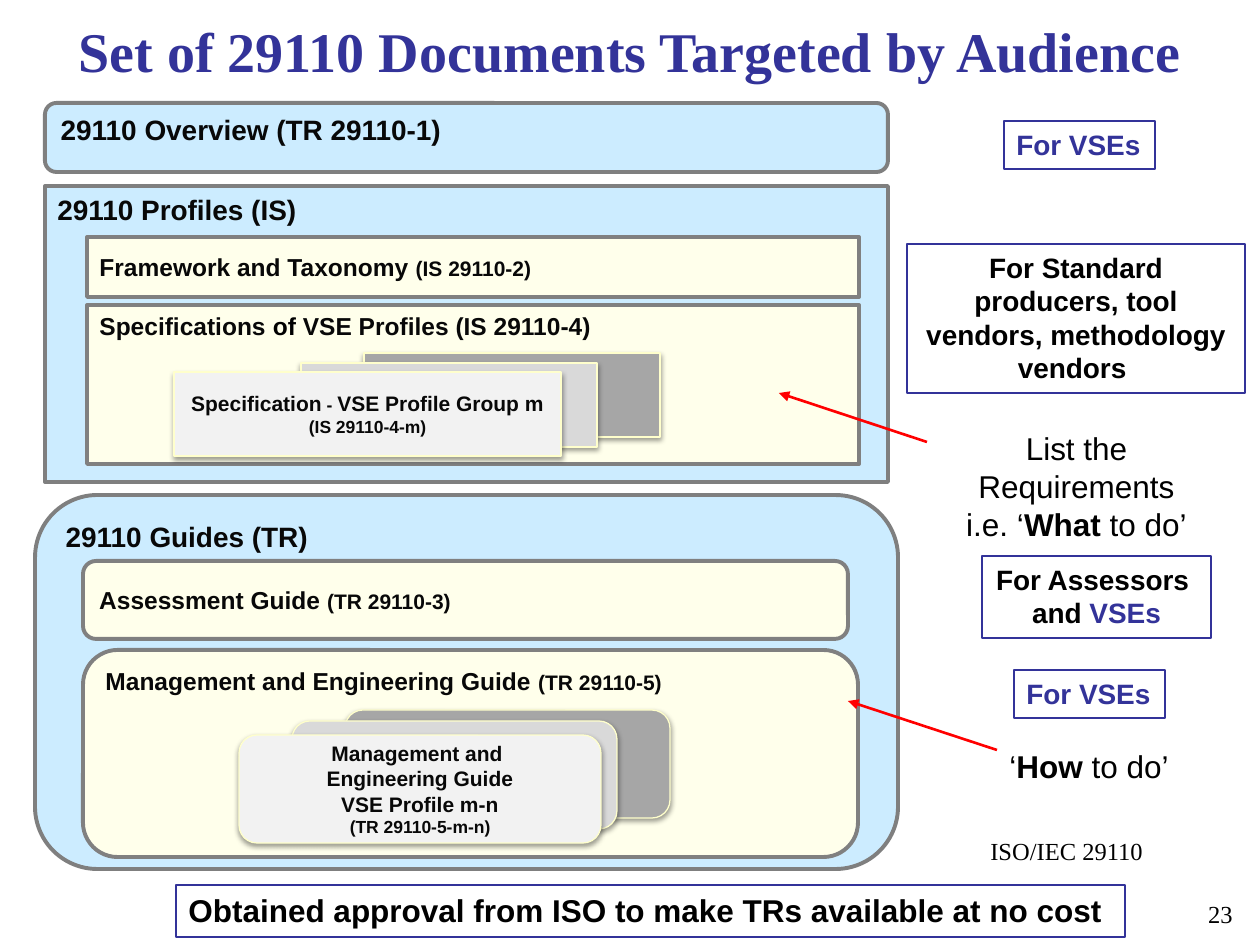
from lxml import etree
from pptx import Presentation
from pptx import util as u
from pptx.dml.color import RGBColor
from pptx.enum import shapes, text
from pptx.oxml.ns import qn

PX = 914400 / 126
COLORS = {
    "navy": "333399", "black": "000000", "ink": "080808", "red": "FF0000",
    "blue": "CCECFF", "cream": "FFFFEB", "edge": "7F7F7F", "inner_edge": "808080",
    "card_edge": "FFFFCC", "back": "A6A6A6", "middle": "D9D9D9", "front": "F2F2F2",
}
RECT = shapes.MSO_SHAPE.RECTANGLE
ROUND = shapes.MSO_SHAPE.ROUNDED_RECTANGLE
LEFT, CENTER, RIGHT = text.PP_ALIGN.LEFT, text.PP_ALIGN.CENTER, text.PP_ALIGN.RIGHT
TOP, MIDDLE = text.MSO_ANCHOR.TOP, text.MSO_ANCHOR.MIDDLE
SERIF = "Times New Roman"


def px(*lengths):
    """Turn pixel lengths into EMU."""
    return [u.Emu(round(n * PX)) for n in lengths]


def rgb(name):
    """Look up a named colour."""
    return RGBColor.from_string(COLORS[name])


def style(font, size=None, color=None, bold=None, name=None):
    """Set the given font properties."""
    if size:
        font.size = u.Pt(size)
    if color:
        font.color.rgb = rgb(color)
    if bold is not None:
        font.bold = bold
    if name:
        font.name = name


def write(tf, paras, size, color="ink", bold=True, name="Arial", align=LEFT, anchor=TOP):
    """Fill a text frame with paragraphs of (text, overrides) runs."""
    tf.vertical_anchor = anchor
    for i, runs in enumerate(paras):
        p = tf.paragraphs[0] if i == 0 else tf.add_paragraph()
        p.alignment = align
        style(p.font, size, color, bold, name)
        for words, changes in runs:
            r = p.add_run()
            r.text = words
            style(p.font if len(runs) == 1 else r.font, **changes)


def add_title(s, words):
    """Place and format the slide title."""
    sp = s.shapes.title
    sp.left, sp.top, sp.width, sp.height = px(0, -24, 1260, 157)
    write(sp.text_frame, [[(words, {})]], 32, "navy", name=SERIF, align=CENTER, anchor=MIDDLE)
    sp.text_frame.paragraphs[0].line_spacing = 0.9


def add_label(s, box, paras, size, wrap=False, framed=False, **look):
    """Add a text box, with a thin navy frame if asked."""
    sp = s.shapes.add_textbox(*px(*box))
    tf = sp.text_frame
    tf.word_wrap = wrap
    tf.auto_size = text.MSO_AUTO_SIZE.SHAPE_TO_FIT_TEXT
    write(tf, paras, size, **look)
    if framed:
        sp.line.color.rgb = rgb("navy")
        sp.line.width = u.Pt(0.75)


def add_box(s, kind, box, fill, edge, weight=2.25):
    """Add a filled, outlined shape without a shadow."""
    sp = s.shapes.add_shape(kind, *px(*box))
    sp.shadow.inherit = False
    sp.fill.solid()
    sp.fill.fore_color.rgb = rgb(fill)
    sp.line.color.rgb = rgb(edge)
    sp.line.width = u.Pt(weight)
    return sp


def add_section(s, kind, box, heading):
    """Add a blue section with its heading."""
    sp = add_box(s, kind, box, "blue", "edge")
    write(sp.text_frame, [[(heading, {})]], 16)


def add_panel(s, kind, box, runs, anchor=TOP):
    """Add a cream panel with its heading."""
    sp = add_box(s, kind, box, "cream", "inner_edge")
    write(sp.text_frame, [runs], 14, anchor=anchor)


def add_shadow(sp):
    """Give a shape a soft shadow straight below."""
    effects = sp._element.spPr.find(qn("a:effectLst"))
    shadow = etree.SubElement(effects, qn("a:outerShdw"), blurRad=str(u.Pt(3.1)),
                              dist=str(u.Pt(1.6)), dir="5400000", rotWithShape="0")
    color = etree.SubElement(shadow, qn("a:srgbClr"), val=COLORS["black"])
    etree.SubElement(color, qn("a:alpha"), val="38000")


def add_cards(s, kind, boxes, paras):
    """Stack three cards and write on the front one."""
    for box, fill in zip(boxes, ("back", "middle", "front")):
        sp = add_box(s, kind, box, fill, "card_edge", 0.75)
        add_shadow(sp)
    write(sp.text_frame, paras, 12, align=CENTER, anchor=MIDDLE)


def add_arrow(s, *ends):
    """Add a red arrow from the first point to the second."""
    sp = s.shapes.add_connector(shapes.MSO_CONNECTOR.STRAIGHT, *px(*ends))
    sp.line.color.rgb = rgb("red")
    sp.line.width = u.Pt(1.5)
    etree.SubElement(sp.line._get_or_add_ln(), qn("a:tailEnd"), type="triangle")
    etree.SubElement(sp._element.spPr, qn("a:effectLst"))


def add_profiles(s):
    """Draw the profiles section."""
    add_section(s, RECT, (45, 186, 843, 296), "29110 Profiles (IS)")
    add_panel(s, RECT, (87, 237, 772, 60),
              [("Framework and Taxonomy ", {}), ("(IS 29110-2)", {"size": 12})], MIDDLE)
    add_panel(s, RECT, (87, 305, 772, 159),
              [("Specifications ", {}), ("of ", {"color": "black"}),
               ("VSE Profiles (IS 29110-4)", {})])
    add_cards(s, RECT, [(364, 353, 296, 84), (301, 363, 296, 84), (174, 372, 387, 84)],
              [[("Specification", {}), (" - ", {"size": 10}), ("VSE Profile Group m", {})],
               [("(IS 29110-4-m)", {"size": 10})]])


def add_guides(s):
    """Draw the guides section."""
    add_section(s, ROUND, (35, 495, 863, 374), "29110 Guides (TR)")
    add_panel(s, ROUND, (83, 561, 765, 78),
              [("Assessment Guide ", {}), ("(TR 29110-3)", {"size": 12})], MIDDLE)
    add_panel(s, ROUND, (83, 650, 775, 207),
              [("Management and Engineering Guide ", {}), ("(TR 29110-5)", {"size": 12})])
    add_cards(s, ROUND, [(345, 710, 325, 108), (292, 721, 325, 108), (239, 735, 362, 108)],
              [[("Management and ", {})], [("Engineering Guide", {})],
               [("VSE Profile m-n", {})], [("(TR 29110-5-m-n)", {"size": 10})]])


def add_audiences(s):
    """Draw the audience labels on the right."""
    for left, top in ((1004, 121), (1014, 670)):
        add_label(s, (left, top, 151, 48), [[("For VSEs", {})]], 16, framed=True, color="navy")
    add_label(s, (907, 244, 338, 149),
              [[("For Standard producers, tool vendors, methodology vendors ", {})]],
              16, wrap=True, framed=True, color="black", align=CENTER)
    add_label(s, (982, 556, 229, 82),
              [[("For Assessors ", {})], [("and", {}), (" VSEs", {"color": "navy"})]],
              16, framed=True, color="black", align=CENTER)
    add_label(s, (911, 423, 331, 88),
              [[("List the Requirements", {})],
               [("i.e. ‘", {}), ("What", {"bold": True}), (" to do’", {})]],
              18, color="black", bold=False, align=CENTER)
    add_label(s, (997, 741, 185, 50),
              [[("‘", {}), ("How", {"bold": True}), (" to do’", {})]],
              18, color="black", bold=False)


def main():
    """Build and save the slide."""
    prs = Presentation()
    prs.slide_width, prs.slide_height = px(1260, 945)
    s = prs.slides.add_slide(prs.slide_layouts[5])
    add_title(s, "Set of 29110 Documents Targeted by Audience")
    add_section(s, ROUND, (45, 103, 843, 69), "29110 Overview (TR 29110-1)")
    add_profiles(s)
    add_guides(s)
    add_audiences(s)
    add_arrow(s, 927, 442, 779, 393)
    add_arrow(s, 997, 750, 848, 701)
    add_label(s, (176, 885, 949, 52),
              [[("Obtained approval from ISO to make TRs available at no cost", {})]],
              18, wrap=True, framed=True, color="black")
    serif = {"color": "black", "bold": False, "name": SERIF}
    add_label(s, (978, 830, 178, 42), [[("ISO/IEC 29110", {})]], 14, **serif)
    add_label(s, (951, 893, 294, 66), [[("23", {})]], 14, wrap=True, align=RIGHT, **serif)
    prs.save("out.pptx")


if __name__ == "__main__":
    main()
